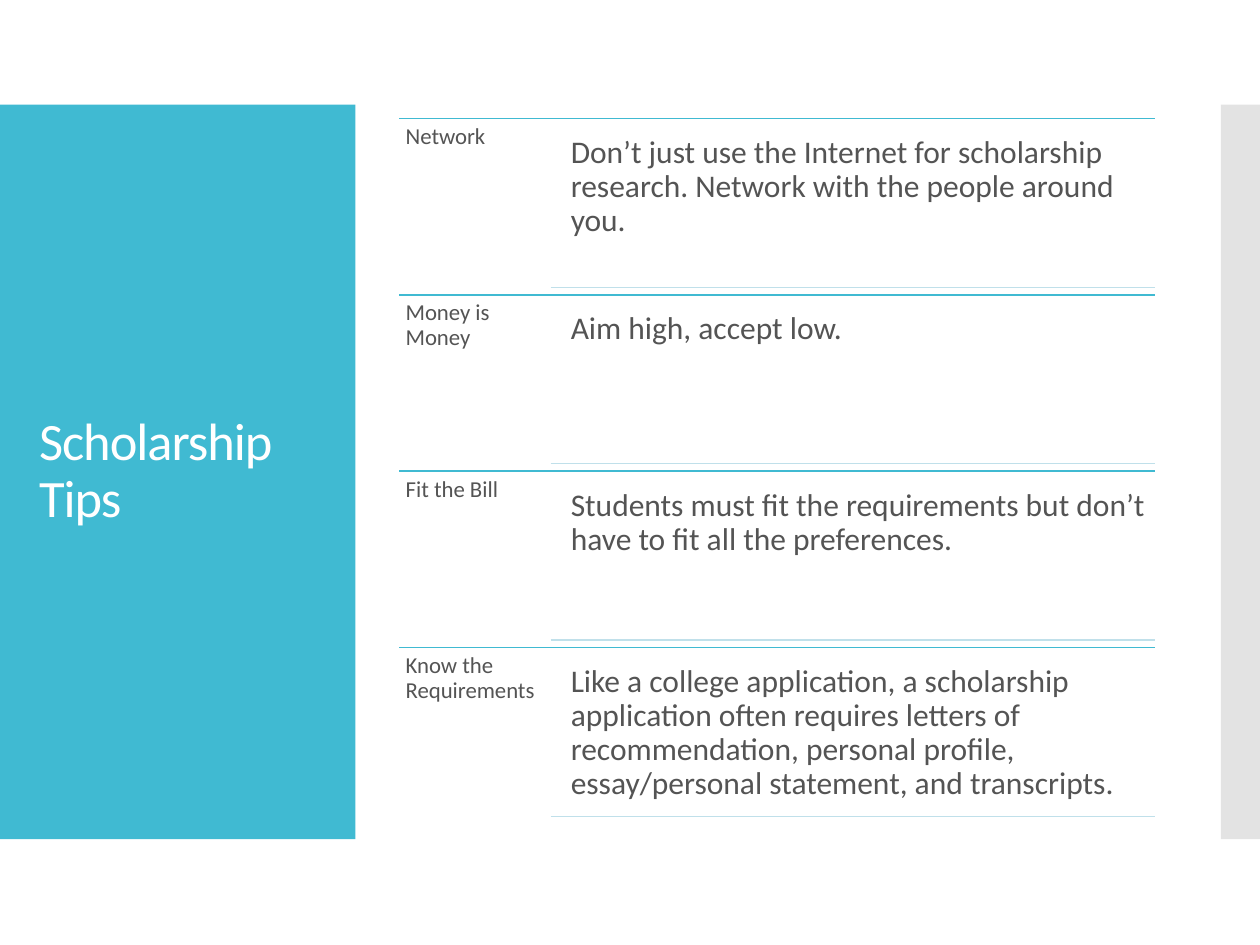
from dataclasses import dataclass

import lxml.etree
import pptx
import pptx.dml.color
import pptx.enum.shapes
import pptx.enum.text
import pptx.oxml.ns
import pptx.util

Inches = pptx.util.Inches
Anchor = pptx.enum.text.MSO_ANCHOR

COLORS = {
    "accent": "40BAD2",
    "pale": "C0E0EA",
    "edge": "C8C8C8",
    "body": "545454",
    "white": "FFFFFF",
}
FONT = "Calibri"
LEFT, RIGHT = 3.17, 9.17
FIRST_TOP, ROW_HEIGHT = 0.94, 1.4
LABEL_WIDTH = 1.2
ADVICE_INDENT, ADVICE_DROP, ADVICE_HEIGHT = 0.09, 0.07, 1.27


@dataclass(frozen=True)
class Tip:
    label: str
    advice: str


TIPS = [
    Tip("Network", "Don’t just use the Internet for scholarship research. "
        "Network with the people around you."),
    Tip("Money is Money", "Aim high, accept low."),
    Tip("Fit the Bill", "Students must fit the requirements but don’t have to "
        "fit all the preferences."),
    Tip("Know the Requirements", "Like a college application, a scholarship "
        "application often requires letters of recommendation, personal "
        "profile, essay/personal statement, and transcripts."),
]


def rgb(name: str) -> pptx.dml.color.RGBColor:
    return pptx.dml.color.RGBColor.from_string(COLORS[name])


def write(holder, text: str, *, size: float, color: str = "body",
          inset: float = 0.05, anchor=Anchor.TOP, spacing: float = 0) -> None:
    frame = holder.text_frame
    frame.word_wrap = True
    frame.auto_size = pptx.enum.text.MSO_AUTO_SIZE.NONE
    frame.vertical_anchor = anchor
    frame.margin_left = frame.margin_right = Inches(inset)
    frame.margin_top = frame.margin_bottom = Inches(inset)
    paragraph = frame.paragraphs[0]
    paragraph.alignment = pptx.enum.text.PP_ALIGN.LEFT
    paragraph.line_spacing = 0.9
    run = paragraph.add_run()
    run.text = text
    run.font.name = FONT
    run.font.size = pptx.util.Pt(size)
    run.font.color.rgb = rgb(color)
    if spacing:
        run.font._element.set("spc", str(round(spacing * 100)))


def add_panel(slide, left: float, width: float, color: str,
              opacity: int = 100) -> None:
    panel = slide.shapes.add_shape(
        pptx.enum.shapes.MSO_SHAPE.RECTANGLE,
        Inches(left), Inches(0.83), Inches(width), Inches(5.83))
    panel.shadow.inherit = False
    panel.line.fill.background()
    panel.fill.solid()
    panel.fill.fore_color.rgb = rgb(color)
    if opacity < 100:
        tint = panel._element.spPr.find(".//" + pptx.oxml.ns.qn("a:srgbClr"))
        alpha = lxml.etree.SubElement(tint, pptx.oxml.ns.qn("a:alpha"))
        alpha.set("val", str(opacity * 1000))


def add_rule(slide, left: float, top: float, color: str) -> None:
    rule = slide.shapes.add_connector(
        pptx.enum.shapes.MSO_CONNECTOR.STRAIGHT,
        Inches(left), Inches(top), Inches(RIGHT), Inches(top))
    rule.line.color.rgb = rgb(color)
    rule.line.width = pptx.util.Pt(0.85)
    lxml.etree.SubElement(rule._element.spPr, pptx.oxml.ns.qn("a:effectLst"))


def add_text(slide, text: str, left: float, top: float, width: float,
             height: float, **style) -> None:
    box = slide.shapes.add_textbox(
        Inches(left), Inches(top), Inches(width), Inches(height))
    write(box, text, **style)


def add_tip(slide, tip: Tip, top: float) -> None:
    divider_left = LEFT + LABEL_WIDTH
    advice_left = divider_left + ADVICE_INDENT
    advice_top = top + ADVICE_DROP
    add_rule(slide, LEFT, top, "accent")
    add_text(slide, tip.label, LEFT, top, LABEL_WIDTH, ROW_HEIGHT, size=13)
    add_text(slide, tip.advice, advice_left, advice_top, RIGHT - advice_left,
             ADVICE_HEIGHT, size=18, inset=0.07)
    add_rule(slide, divider_left, advice_top + ADVICE_HEIGHT, "pale")


def main() -> None:
    deck = pptx.Presentation()
    deck.slide_width, deck.slide_height = Inches(10), Inches(7.5)
    slide = deck.slides.add_slide(deck.slide_layouts[5])

    add_panel(slide, 0, 2.82, "accent")
    add_panel(slide, 9.69, 0.31, "edge", opacity=50)

    heading = slide.shapes.title
    slide.shapes._spTree.append(heading._element)
    heading.left, heading.top = Inches(0.21), Inches(1.23)
    heading.width, heading.height = Inches(2.42), Inches(5.03)
    write(heading, "Scholarship Tips", size=30, color="white", inset=0.1,
          anchor=Anchor.MIDDLE, spacing=-0.6)

    for row, tip in enumerate(TIPS):
        add_tip(slide, tip, FIRST_TOP + row * ROW_HEIGHT)

    deck.save("out.pptx")


if __name__ == "__main__":
    main()
